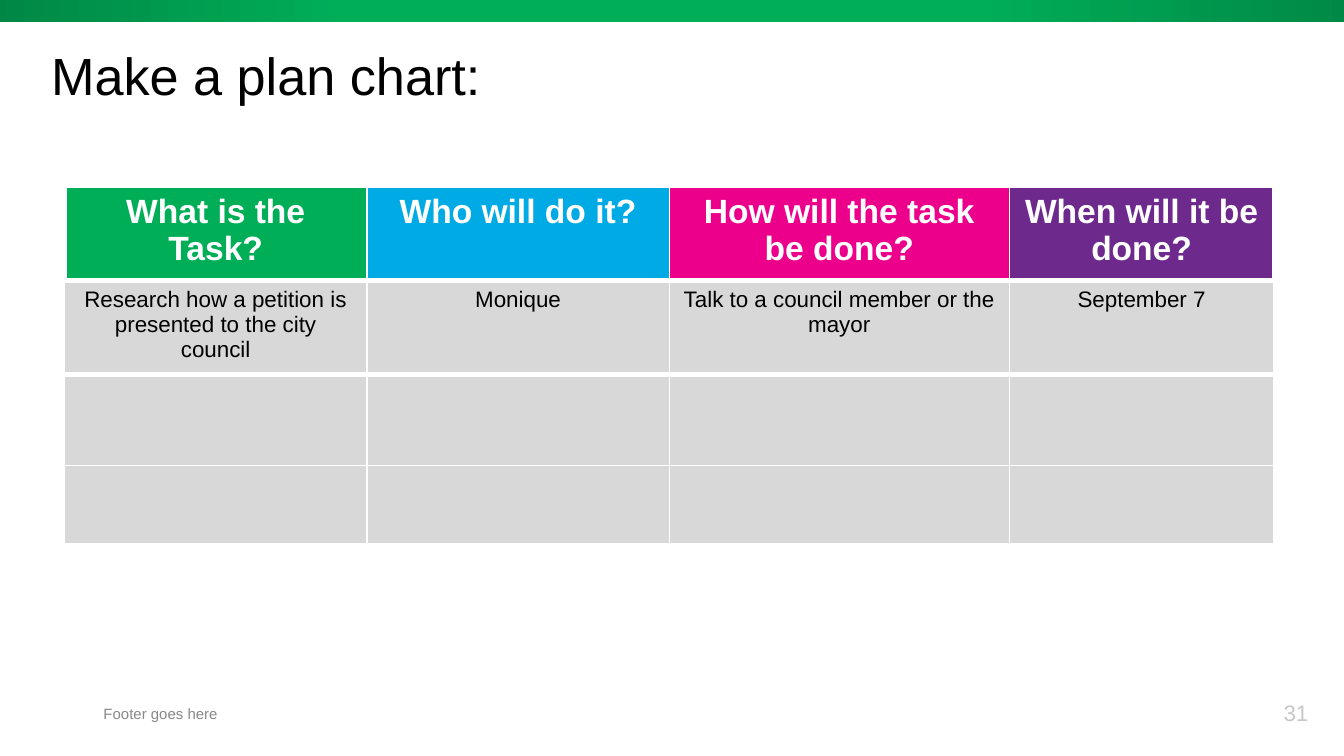
import copy

import pptx
import pptx.dml.color
import pptx.enum.dml
import pptx.enum.shapes
import pptx.enum.text
import pptx.oxml
import pptx.oxml.ns
import pptx.util

WIDTH = pptx.util.Inches(10)
HEIGHT = WIDTH * 9 // 16
COLORS = {
    "dark_green": "008745", "green": "00AE58", "blue": "00AAE5",
    "pink": "EC008B", "purple": "6E298D", "cell": "D8D8D8",
    "white": "FFFFFF", "black": "000000", "number": "C7C8CA", "footer": "888888",
}
COLUMNS = [
    ("What is the Task?", "green", 22.5),
    ("Who will do it?", "blue", 22.5),
    ("How will the task be done?", "pink", 25.3),
    ("When will it be done?", "purple", 19.7),
]
TASK = [
    "Research how a petition is presented to the city council",
    "Monique",
    "Talk to a council member or the mayor",
    "September 7",
]
ROW_HEIGHTS = [9.07, 9.6, 12.09, 10.31]


def across(percent):
    return round(WIDTH * percent / 100)


def down(percent):
    return round(HEIGHT * percent / 100)


def area(x, y, w, h):
    return across(x), down(y), across(w), down(h)


def rgb(name):
    return pptx.dml.color.RGBColor.from_string(COLORS[name])


def write(tf, text, size=12, color="black", bold=False, align=None, spacing=None):
    p = tf.paragraphs[0]
    p.alignment = align
    p.line_spacing = spacing
    r = p.add_run()
    r.text = text
    r.font.name = "Arial"
    r.font.size = pptx.util.Pt(size)
    r.font.bold = bold
    r.font.color.rgb = rgb(color)


def add_text(s, box, text, **style):
    tf = s.shapes.add_textbox(*area(*box)).text_frame
    tf.word_wrap = True
    tf.vertical_anchor = pptx.enum.text.MSO_ANCHOR.MIDDLE
    tf.margin_left = tf.margin_right = tf.margin_top = tf.margin_bottom = 0
    write(tf, text, **style)


def add_gradient_bar(s, box, stops):
    sp = s.shapes.add_shape(pptx.enum.shapes.MSO_SHAPE.RECTANGLE, *area(*box))
    sp.shadow.inherit = False
    sp.line.fill.background()
    sp.fill.gradient()
    sp.fill.gradient_angle = 0
    stop_list = sp.fill._fill._gradFill.gsLst
    for gs in list(stop_list)[2:]:
        stop_list.remove(gs)
    while len(stop_list) < len(stops):
        stop_list.append(copy.deepcopy(stop_list[0]))
    for stop, (position, color) in zip(sp.fill.gradient_stops, stops):
        stop.position = position
        stop.color.rgb = rgb(color)


def set_borders(cell, **widths):
    tcPr = cell._tc.get_or_add_tcPr()
    for i, side in enumerate("LRTB"):
        ln = pptx.oxml.parse_xml(
            f'<a:ln{side} {pptx.oxml.ns.nsdecls("a")} w="{pptx.util.Pt(widths[side])}">'
            f'<a:solidFill><a:srgbClr val="{COLORS["white"]}"/></a:solidFill></a:ln{side}>'
        )
        tcPr.insert(i, ln)


def add_plan_table(s):
    widths = [share for _, _, share in COLUMNS]
    frame = s.shapes.add_table(
        len(ROW_HEIGHTS), len(COLUMNS),
        *area(4.8, 24.6, sum(widths), sum(ROW_HEIGHTS)),
    )
    table = frame.table
    for column, share in zip(table.columns, widths):
        column.width = across(share)
    for row, share in zip(table.rows, ROW_HEIGHTS):
        row.height = down(share)

    center = pptx.enum.text.PP_ALIGN.CENTER
    last = len(COLUMNS) - 1
    for c, (heading, color, _) in enumerate(COLUMNS):
        for r in range(len(ROW_HEIGHTS)):
            cell = table.cell(r, c)
            cell.fill.solid()
            cell.fill.fore_color.rgb = rgb("cell" if r else color)
            set_borders(
                cell,
                L=3 if r == 0 and c == 0 else 1,
                R=3 if r == 0 and c == last else 1,
                T=3 if r < 3 else 1,
                B=3 if r < 2 else 1,
            )
        write(table.cell(0, c).text_frame, heading,
              size=18, color="white", bold=True, align=center)
        write(table.cell(1, c).text_frame, TASK[c], align=center)


def main():
    prs = pptx.Presentation()
    prs.slide_width, prs.slide_height = WIDTH, HEIGHT
    s = prs.slides.add_slide(prs.slide_layouts[6])
    add_gradient_bar(s, (-0.9, -0.12, 103, 3.02), [
        (0, "dark_green"), (0.26, "green"), (0.71, "green"), (1, "dark_green"),
    ])
    add_text(s, (3.8, 3.74, 63.8, 13.88), "Make a plan chart:", size=28, spacing=0.8)
    add_text(s, (95.5, 91.64, 4.5, 5.34), "31", color="number")
    add_text(s, (7.7, 92.84, 58.1, 3.02), "Footer goes here", size=8, color="footer")
    add_plan_table(s)
    prs.save("out.pptx")


if __name__ == "__main__":
    main()
